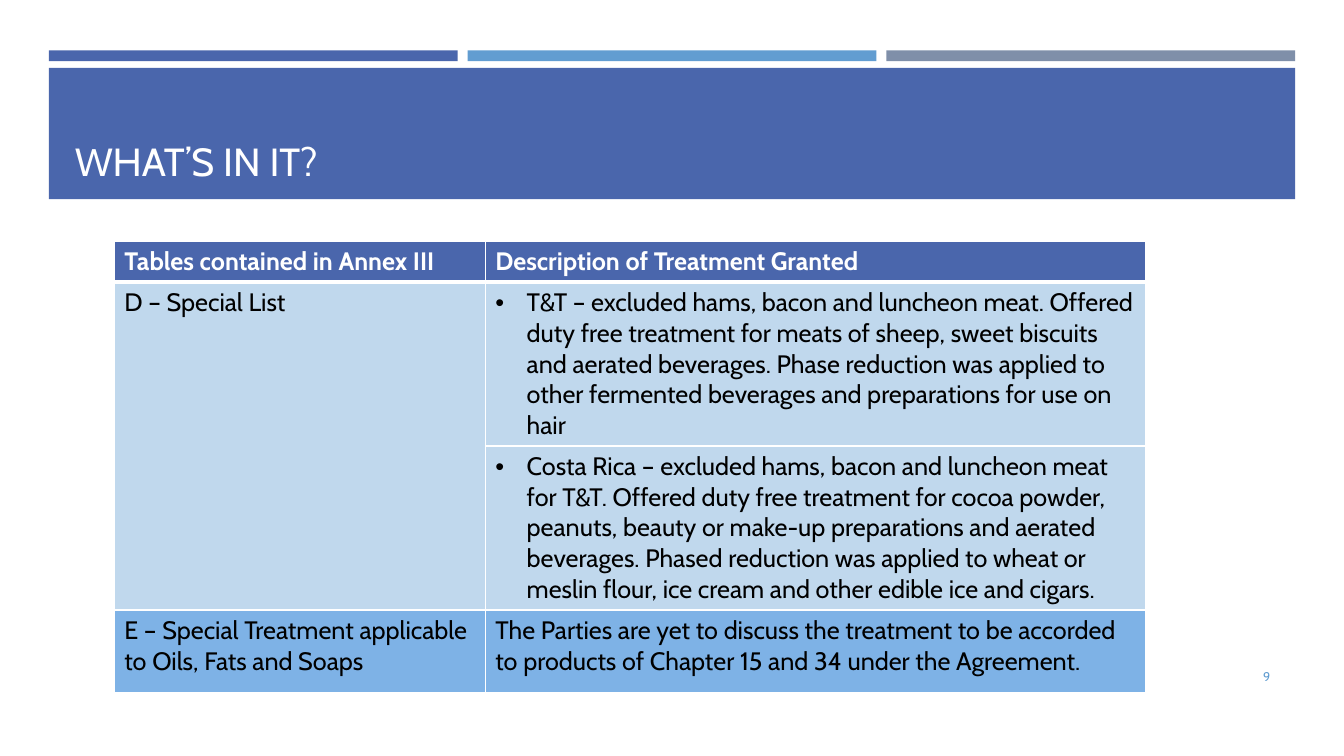
from lxml import etree
from pptx import Presentation
from pptx.dml.color import RGBColor
from pptx.enum.shapes import MSO_SHAPE
from pptx.enum.text import MSO_ANCHOR, MSO_AUTO_SIZE, PP_ALIGN
from pptx.oxml.ns import qn
from pptx.util import Cm, Pt

RECTANGLE = MSO_SHAPE.RECTANGLE
BOTTOM, MIDDLE = MSO_ANCHOR.BOTTOM, MSO_ANCHOR.MIDDLE
LEFT, RIGHT = PP_ALIGN.LEFT, PP_ALIGN.RIGHT
NO_AUTOFIT = MSO_AUTO_SIZE.NONE

FONT = "Cabin"
COLOURS = {
    "banner": "4A66AC",
    "sky": "629DD1",
    "slate": "7F8FA9",
    "pale": "C0D8ED",
    "strong": "7EB2E6",
    "white": "FFFFFF",
    "black": "000000",
}
TITLE_ONLY = 5
HEADER = ("Tables contained in Annex III", "Description of Treatment Granted")
TRINIDAD = (
    "T&T – excluded hams, bacon and luncheon meat. Offered duty free treatment "
    "for meats of sheep, sweet biscuits and aerated beverages. Phase reduction was "
    "applied to other fermented beverages and preparations for use on hair"
)
COSTA_RICA = (
    "Costa Rica – excluded hams, bacon and luncheon meat for T&T. Offered duty free "
    "treatment for cocoa powder, peanuts, beauty or make-up preparations and aerated "
    "beverages. Phased reduction was applied to wheat or meslin flour, ice cream and "
    "other edible ice and cigars."
)
OILS = "E – Special Treatment applicable to Oils, Fats and Soaps"
PENDING = (
    "The Parties are yet to discuss the treatment to be accorded to products of "
    "Chapter 15 and 34 under the Agreement."
)
# Each row: texts, fill, text colour, height in cm
ROWS = [
    (HEADER, "banner", "white", 1.0),
    (("D – Special List", TRINIDAD), "pale", "black", 4.13),
    (("", COSTA_RICA), "pale", "black", 4.13),
    ((OILS, PENDING), "strong", "black", 2.08),
]
BULLETED = (TRINIDAD, COSTA_RICA)
COLUMN_WIDTHS = (9.35, 16.63)


def colour(name):
    return RGBColor.from_string(COLOURS[name])


def style(para, size, colour_name, bold=False, align=LEFT):
    para.alignment = align
    para.font.name = FONT
    para.font.size = Pt(size)
    para.font.bold = bold
    para.font.color.rgb = colour(colour_name)


def add_block(page, left, top, width, height, fill):
    block = page.shapes.add_shape(RECTANGLE, left, top, width, height)
    block.shadow.inherit = False
    block.fill.solid()
    block.fill.fore_color.rgb = colour(fill)
    block.line.fill.background()


def add_stripes(page, left, top, width, height):
    gap = Cm(0.25)
    stripe = (width - 2 * gap) // 3
    for index, fill in enumerate(("banner", "sky", "slate")):
        add_block(page, left + index * (stripe + gap), top, stripe, height, fill)


def add_banner(page, left, top, width, height, text):
    add_block(page, left, top, width, height, "banner")
    title = page.shapes.title
    inset = Cm(0.4)
    title.left, title.top = left + inset, top + Cm(0.25)
    title.width, title.height = width - 2 * inset, height - Cm(0.49)
    frame = title.text_frame
    frame.text = text
    frame.auto_size = NO_AUTOFIT
    frame.vertical_anchor = BOTTOM
    style(frame.paragraphs[0], 28, "white")
    # Bring the title in front of the banner
    page.shapes._spTree.append(title._element)


def add_bullet(para):
    props = para._p.get_or_add_pPr()
    props.set("marL", str(Cm(0.79)))
    props.set("indent", str(-Cm(0.79)))
    etree.SubElement(props, qn("a:buFont"), typeface="Arial")
    etree.SubElement(props, qn("a:buChar"), char="•")


def set_borders(cell, bottom_points):
    props = cell._tc.get_or_add_tcPr()
    sides = (("a:lnL", 1), ("a:lnR", 1), ("a:lnT", 1), ("a:lnB", bottom_points))
    for position, (tag, points) in enumerate(sides):
        line = etree.Element(qn(tag), w=str(Pt(points)))
        solid = etree.SubElement(line, qn("a:solidFill"))
        etree.SubElement(solid, qn("a:srgbClr"), val=COLOURS["white"])
        props.insert(position, line)


def add_treatment_table(page, left, top):
    width = Cm(sum(COLUMN_WIDTHS))
    height = Cm(sum(row[-1] for row in ROWS))
    frame = page.shapes.add_table(len(ROWS), len(HEADER), left, top, width, height)
    table = frame.table
    table.horz_banding = False
    for column, centimetres in zip(table.columns, COLUMN_WIDTHS):
        column.width = Cm(centimetres)
    for index, (texts, fill, ink, centimetres) in enumerate(ROWS):
        is_header = index == 0
        table.rows[index].height = Cm(centimetres)
        for cell, text in zip(table.rows[index].cells, texts):
            cell.fill.solid()
            cell.fill.fore_color.rgb = colour(fill)
            set_borders(cell, 3 if is_header else 1)
            cell.text = text
            para = cell.text_frame.paragraphs[0]
            if text in BULLETED:
                add_bullet(para)
            style(para, 18, ink, bold=is_header)
    # The special list covers both country rows
    table.cell(1, 0).merge(table.cell(2, 0))


def add_page_number(page, left, top, width, height, number):
    box = page.shapes.add_textbox(left, top, width, height)
    frame = box.text_frame
    frame.word_wrap = True
    frame.vertical_anchor = MIDDLE
    frame.text = number
    style(frame.paragraphs[0], 9, "sky", align=RIGHT)


def main():
    deck = Presentation()
    deck.slide_width, deck.slide_height = Cm(33.87), Cm(19.05)
    page = deck.slides.add_slide(deck.slide_layouts[TITLE_ONLY])
    left, width = Cm(1.23), Cm(31.41)
    add_stripes(page, left, Cm(1.27), width, Cm(0.27))
    add_banner(page, left, Cm(1.71), width, Cm(3.31), "WHAT’S IN IT?")
    add_treatment_table(page, Cm(2.88), Cm(6.08))
    add_page_number(page, Cm(29.34), Cm(16.54), Cm(2.92), Cm(1.02), "9")
    deck.save("out.pptx")


if __name__ == "__main__":
    main()
